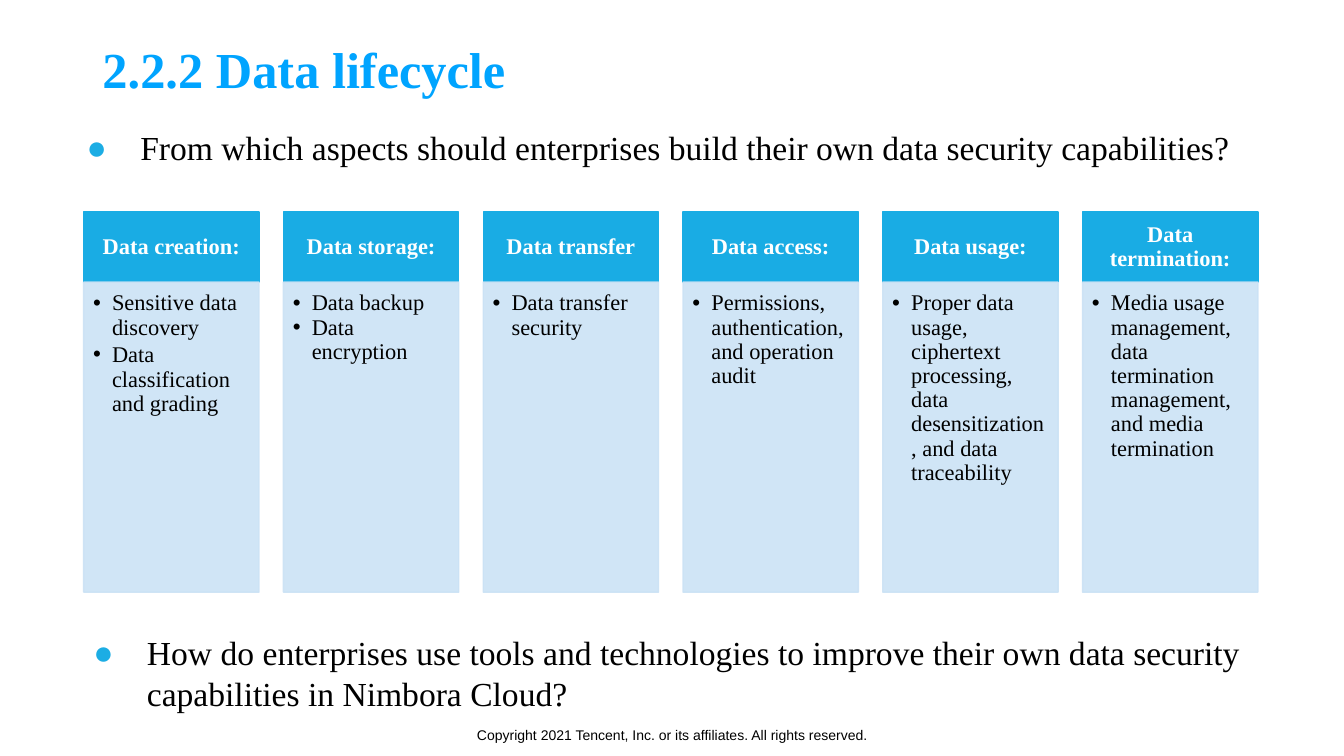
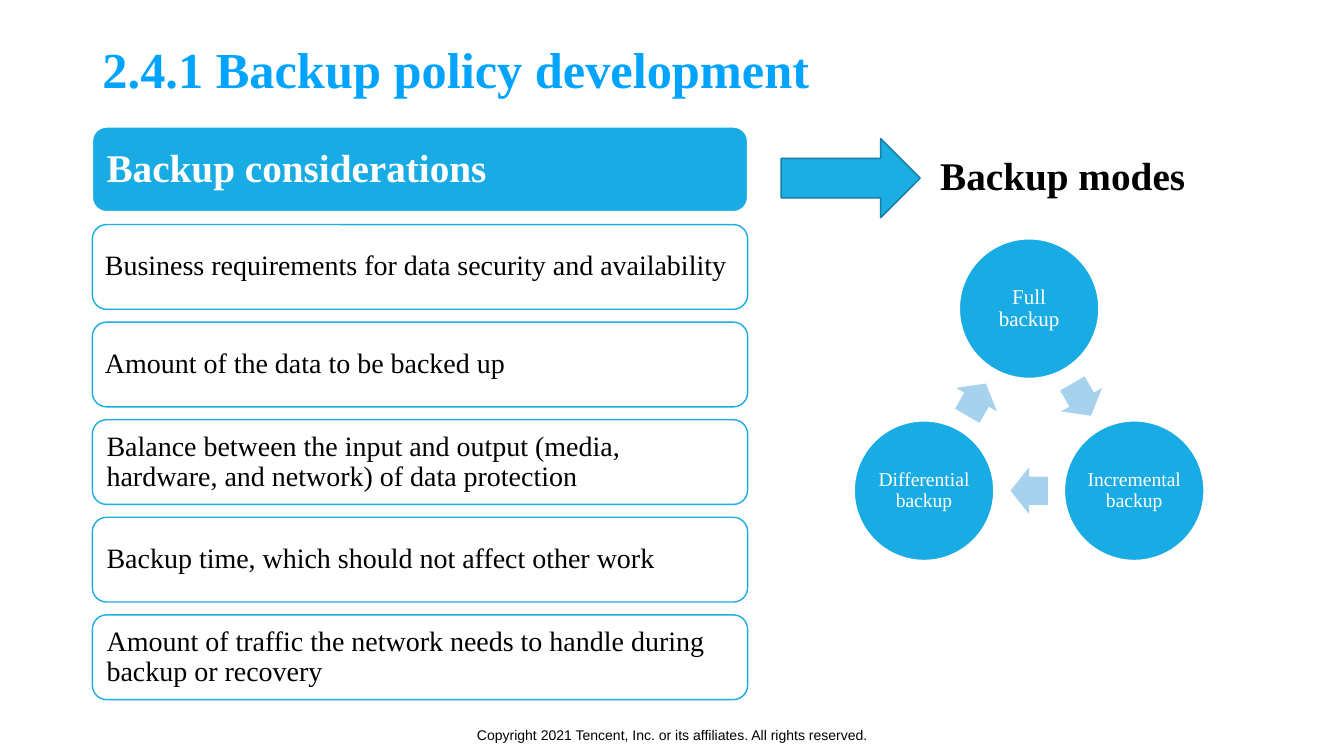
from math import cos, radians, sin

from lxml.etree import SubElement
from pptx import Presentation
from pptx.dml.color import RGBColor
from pptx.enum.shapes import MSO_SHAPE
from pptx.enum.text import MSO_ANCHOR, MSO_AUTO_SIZE, PP_ALIGN
from pptx.oxml.ns import qn
from pptx.util import Pt

BLACK = RGBColor(0x00, 0x00, 0x00)
WHITE = RGBColor(0xFF, 0xFF, 0xFF)
TITLE_BLUE = RGBColor(0x00, 0xA4, 0xFF)
BLUE = RGBColor(0x19, 0xAC, 0xE4)
ACCENT = RGBColor(0x1C, 0xAD, 0xE4)
ACCENT_DARK = RGBColor(0x14, 0x7E, 0xA6)
PALE_BLUE = RGBColor(0xCB, 0xE2, 0xF5)
ARROW_BLUE = RGBColor(0xA7, 0xD2, 0xEE)
SERIF = "Times New Roman"
SANS = "Arial"
COPYRIGHT = "Copyright 2021 Tencent, Inc. or its affiliates. All rights reserved."


def write(shape, *texts, size, color=BLACK, font=SERIF, bold=False,
          align=PP_ALIGN.LEFT, anchor=MSO_ANCHOR.MIDDLE, insets=(14.4, 7.2, 14.4, 7.2),
          spacing=1.0, gap=0, bullet=None, bullet_color=BLACK, indent=0):
    """Fill a shape with one paragraph per text; insets run left, top, right, bottom."""
    frame = shape.text_frame
    frame.word_wrap = True
    frame.auto_size = MSO_AUTO_SIZE.NONE
    frame.vertical_anchor = anchor
    (frame.margin_left, frame.margin_top,
     frame.margin_right, frame.margin_bottom) = map(Pt, insets)
    for index, text in enumerate(texts):
        paragraph = frame.add_paragraph() if index else frame.paragraphs[0]
        if bullet:
            properties = paragraph._p.get_or_add_pPr()
            properties.set("marL", str(Pt(indent)))
            properties.set("indent", str(-Pt(indent)))
            tint = SubElement(properties, qn("a:buClr"))
            SubElement(tint, qn("a:srgbClr"), val=str(bullet_color))
            SubElement(properties, qn("a:buFont"), typeface=SANS)
            SubElement(properties, qn("a:buChar"), char=bullet)
        paragraph.alignment = align
        paragraph.line_spacing = spacing
        if index and gap:
            paragraph.space_before = Pt(gap)
        run = paragraph.add_run()
        run.text = text
        run.font.name = font
        run.font.size = Pt(size)
        run.font.bold = bold
        run.font.color.rgb = color


def draw(slide, preset, left, top, width, height, fill, line=None, alpha=None):
    """Add a preset shape with a flat fill, a 2 pt line if given, and opacity in percent."""
    shape = slide.shapes.add_shape(preset, Pt(left), Pt(top), Pt(width), Pt(height))
    shape.shadow.inherit = False
    shape.fill.solid()
    shape.fill.fore_color.rgb = fill
    if line is None:
        shape.line.fill.background()
    else:
        shape.line.color.rgb = line
        shape.line.width = Pt(2)
    if alpha:
        for tint in shape._element.spPr.iter(qn("a:srgbClr")):
            SubElement(tint, qn("a:alpha"), val=str(alpha * 1000))
    return shape


prs = Presentation()
prs.slide_width, prs.slide_height = Pt(1920), Pt(1080)

# Title and copyright line on both slides
slides = []
for heading in ("2.2.2 Data lifecycle", "2.4.1 Backup policy development"):
    slide = prs.slides.add_slide(prs.slide_layouts[5])
    title = slide.shapes.title
    title.left, title.top, title.width, title.height = Pt(132), Pt(65), Pt(1546.5), Pt(75.5)
    write(title, heading, size=72, color=TITLE_BLUE, bold=True, spacing=0.9)
    footer = slide.shapes.add_textbox(Pt(586), Pt(1021), Pt(749), Pt(57.5))
    write(footer, COPYRIGHT, size=20, font=SANS, align=PP_ALIGN.CENTER)
    slides.append(slide)
lifecycle, backup = slides

# Data lifecycle: six stages between two questions
stages = [
    ("Data creation:", ["Sensitive data discovery", "Data classification and grading"], 5),
    ("Data storage:", ["Data backup", "Data encryption"], 0),
    ("Data transfer", ["Data transfer security"], 0),
    ("Data access:", ["Permissions, authentication, and operation audit"], 0),
    ("Data usage:", ["Proper data usage, ciphertext processing, data desensitization, "
                     "and data traceability"], 0),
    ("Data termination:", ["Media usage management, data termination management, "
                           "and media termination"], 0),
]
for column, (stage, measures, gap) in enumerate(stages):
    left = 119.5 + 285.4 * column
    header = draw(lifecycle, MSO_SHAPE.RECTANGLE, left, 303, 250.5, 100, BLUE, BLUE)
    write(header, stage, size=32, color=WHITE, bold=True, align=PP_ALIGN.CENTER,
          insets=(18, 10, 18, 10), spacing=0.9)
    panel = draw(lifecycle, MSO_SHAPE.RECTANGLE, left, 403, 250.5, 443,
                 PALE_BLUE, PALE_BLUE, alpha=89)
    write(panel, *measures, size=32, anchor=MSO_ANCHOR.TOP, insets=(13.5, 13.5, 18, 20),
          spacing=0.9, gap=gap, bullet="•", indent=27)

questions = [
    (119, 896, 1.0, "How do enterprises use tools and technologies to improve their own "
                    "data security capabilities in Nimbora Cloud?"),
    (109.5, 146, 1.5, "From which aspects should enterprises build their own "
                      "data security capabilities?"),
]
for left, top, spacing, text in questions:
    question = lifecycle.shapes.add_textbox(Pt(left), Pt(top), Pt(1679), Pt(116.5))
    write(question, text, size=48, anchor=MSO_ANCHOR.TOP, spacing=spacing,
          bullet="●", bullet_color=ACCENT, indent=76.5)

# Backup policy: list of considerations
considerations = [
    ("Backup considerations", 14.4),
    ("Business requirements for data security and availability", 12),
    ("Amount of the data to be backed up", 12),
    ("Balance between the input and output (media, hardware, and network) "
     "of data protection", 14.4),
    ("Backup time, which should not affect other work", 14.4),
    ("Amount of traffic the network needs to handle during backup or recovery", 14.4),
]
for row, (text, inset) in enumerate(considerations):
    is_heading = row == 0
    card = draw(backup, MSO_SHAPE.ROUNDED_RECTANGLE, 132, 181.4 + 139.4 * row, 936, 121,
                BLUE if is_heading else WHITE, WHITE if is_heading else ACCENT)
    card.adjustments[0] = 0.167
    write(card, text, size=56 if is_heading else 40, color=WHITE if is_heading else BLACK,
          bold=is_heading, insets=(inset,) * 4, spacing=0.9)

# Backup modes: a cycle of three, clockwise from the top
CENTER_X, CENTER_Y, RADIUS = 1470.2, 614.3, 173.4
DISC, ARROW_WIDTH, ARROW_HEIGHT = 199.5, 53.3, 67.3
modes = [("Full backup", 30), ("Incremental backup", 28), ("Differential backup", 28)]
for step, (mode, size) in enumerate(modes):
    angle = radians(-90 + 120 * step)
    disc = draw(backup, MSO_SHAPE.OVAL, CENTER_X + RADIUS * cos(angle) - DISC / 2,
                CENTER_Y + RADIUS * sin(angle) - DISC / 2, DISC, DISC, BLUE, WHITE)
    write(disc, mode, size=size, color=WHITE, align=PP_ALIGN.CENTER,
          insets=(2, 2, 2, 2), spacing=0.9)
    angle = radians(-30 + 120 * step)
    link = draw(backup, MSO_SHAPE.RIGHT_ARROW,
                CENTER_X + RADIUS / 2 * cos(angle) - ARROW_WIDTH / 2,
                CENTER_Y + RADIUS / 2 * sin(angle) - ARROW_HEIGHT / 2,
                ARROW_WIDTH, ARROW_HEIGHT, ARROW_BLUE)
    link.adjustments[0] = 0.6
    link.rotation = 60 + 120 * step

modes_heading = backup.shapes.add_textbox(Pt(1249), Pt(209.5), Pt(538.5), Pt(82))
write(modes_heading, "Backup modes", size=56, bold=True, align=PP_ALIGN.CENTER,
      anchor=MSO_ANCHOR.TOP)
draw(backup, MSO_SHAPE.RIGHT_ARROW, 1116, 198, 198.5, 113, ACCENT, ACCENT_DARK)

prs.save("out.pptx")
